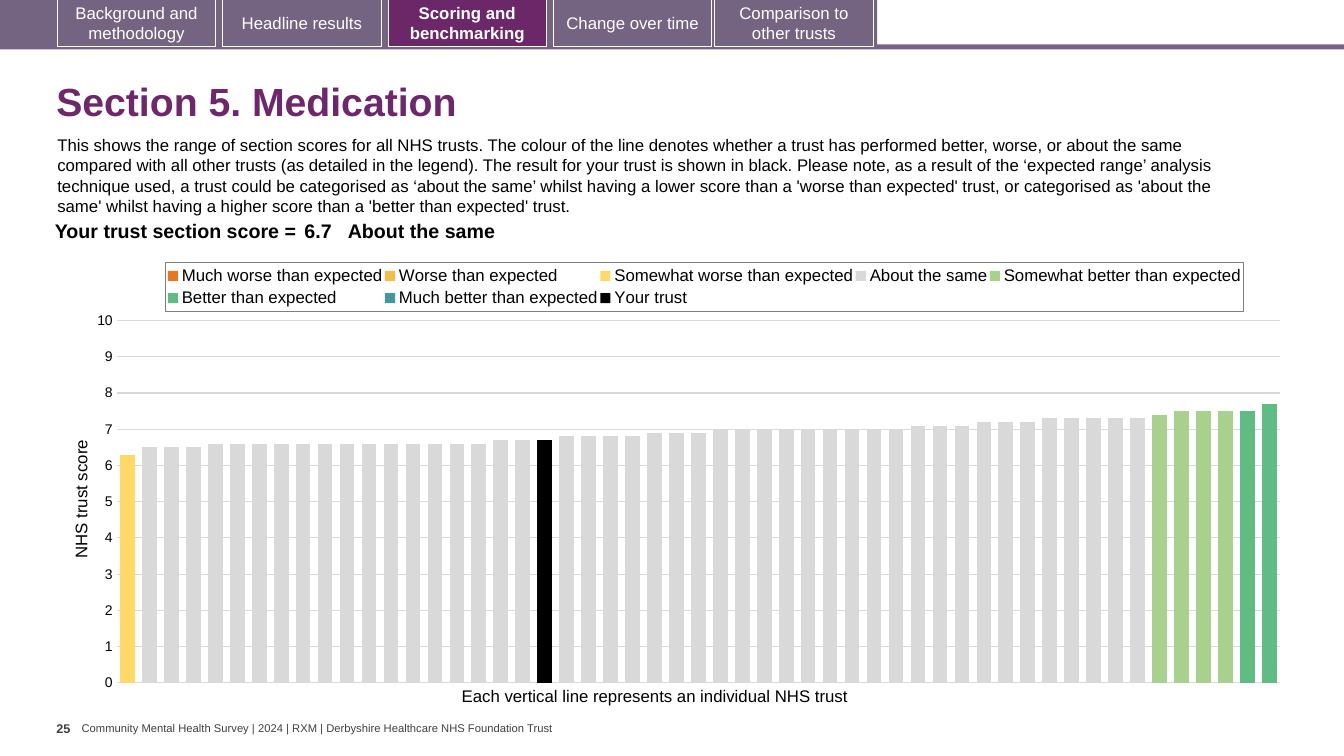
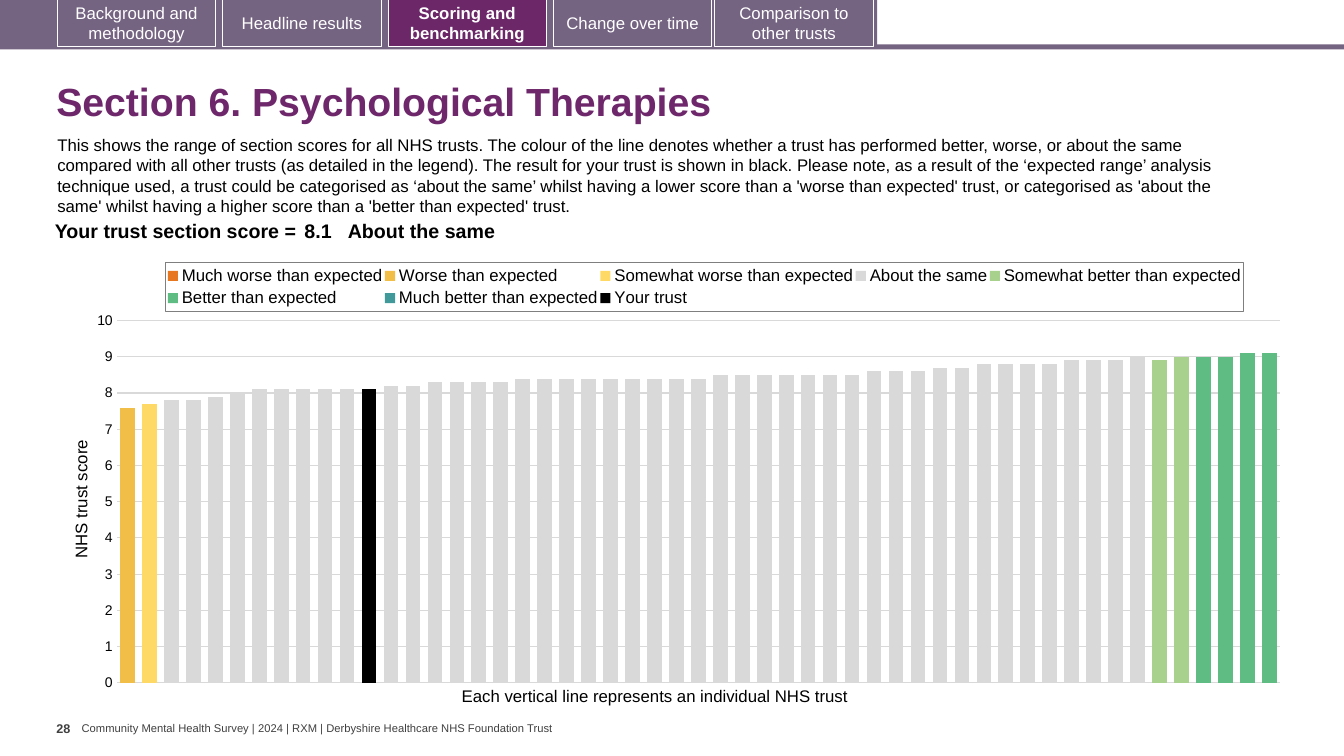
from copy import deepcopy

from pptx import Presentation
from pptx.chart.data import CategoryChartData
from pptx.dml.color import RGBColor
from pptx.enum.chart import XL_CHART_TYPE, XL_LEGEND_POSITION, XL_TICK_MARK
from pptx.enum.shapes import MSO_SHAPE
from pptx.enum.text import MSO_ANCHOR, PP_ALIGN
from pptx.oxml import parse_xml
from pptx.oxml.ns import nsdecls, qn
from pptx.util import Inches, Pt

COLUMNS = XL_CHART_TYPE.COLUMN_CLUSTERED
LEGEND_TOP = XL_LEGEND_POSITION.TOP
NO_TICK = XL_TICK_MARK.NONE
RECTANGLE = MSO_SHAPE.RECTANGLE
TOP, MIDDLE = MSO_ANCHOR.TOP, MSO_ANCHOR.MIDDLE
LEFT, CENTER, RIGHT = PP_ALIGN.LEFT, PP_ALIGN.CENTER, PP_ALIGN.RIGHT

SLIDE_WIDTH, SLIDE_HEIGHT = 13.33, 7.5
FONT, CHART_FONT = "Arial", "Calibri"
BLACK, WHITE, GREY = "000000", "FFFFFF", "404040"
BAND, ACTIVE_TAB, TITLE = "756382", "6B2768", "6D276A"
GRID, LEGEND_BORDER = "D9D9D9", "7F7F7F"

TABS = [
    (0.57, "Background and methodology"),
    (2.21, "Headline results"),
    (3.85, "Scoring and benchmarking"),
    (5.49, "Change over time"),
    (7.09, "Comparison to other trusts"),
]
CURRENT_TAB = "Scoring and benchmarking"
FOOTER = "Community Mental Health Survey | 2024 | RXM | Derbyshire Healthcare NHS Foundation Trust"
EXPLANATION = (
    "This shows the range of section scores for all NHS trusts. The colour of the line denotes "
    "whether a trust has performed better, worse, or about the same compared with all other trusts "
    "(as detailed in the legend). The result for your trust is shown in black. Please note, as a "
    "result of the ‘expected range’ analysis technique used, a trust could be categorised as "
    "‘about the same’ whilst having a lower score than a 'worse than expected' trust, or "
    "categorised as 'about the same' whilst having a higher score than a 'better than expected' trust."
)
SCORE_LABEL = "Your trust section score ="
SCORE_COLUMNS = [2.63, 0.47, 8.59]
AXIS_TITLE = "NHS trust score"
CATEGORY_NOTE = "Each vertical line represents an individual NHS trust"

YOUR_TRUST = "Your trust"
SERIES_COLORS = {
    "Much worse than expected": "E87722",
    "Worse than expected": "F1BE48",
    "Somewhat worse than expected": "FFD966",
    "About the same": "D9D9D9",
    "Somewhat better than expected": "A9D18E",
    "Better than expected": "5FBD83",
    "Much better than expected": "419999",
    YOUR_TRUST: BLACK,
}

# Scores run from left to right, band after band; rank is the place of your trust.
SECTIONS = [
    {
        "page": "25", "title": "Section 5. Medication",
        "score": 6.7, "rank": 20, "result": "About the same",
        "bands": {
            "Somewhat worse than expected": [6.3],
            "About the same": (
                [6.5] * 3 + [6.6] * 13 + [6.7] * 3 + [6.8] * 4 + [6.9] * 3
                + [7] * 9 + [7.1] * 3 + [7.2] * 3 + [7.3] * 5),
            "Somewhat better than expected": [7.4, 7.5, 7.5, 7.5],
            "Better than expected": [7.5, 7.7],
        },
    },
    {
        "page": "28", "title": "Section 6. Psychological Therapies",
        "score": 8.1, "rank": 12, "result": "About the same",
        "bands": {
            "Worse than expected": [7.6],
            "Somewhat worse than expected": [7.7],
            "About the same": (
                [7.8] * 2 + [7.9, 8] + [8.1] * 6 + [8.2] * 2 + [8.3] * 4
                + [8.4] * 9 + [8.5] * 7 + [8.6] * 3 + [8.7] * 2
                + [8.8] * 4 + [8.9] * 3 + [9]),
            "Somewhat better than expected": [8.9, 9],
            "Better than expected": [9, 9, 9.1, 9.1],
        },
    },
]


def rgb(color):
    return RGBColor.from_string(color)


def style_font(font, size, color=BLACK, bold=False, name=FONT):
    font.size, font.bold, font.name = Pt(size), bold, name
    font.color.rgb = rgb(color)


def write_text(frame, text, align=LEFT, line_spacing=None, **font_format):
    paragraph = frame.paragraphs[0]
    paragraph.alignment = align
    if line_spacing:
        paragraph.line_spacing = line_spacing
    run = paragraph.add_run()
    run.text = text
    style_font(run.font, **font_format)


def add_text_box(slide, box, text, anchor=TOP, margins=(0.1, 0.05), wrap=True, **text_format):
    frame = slide.shapes.add_textbox(*map(Inches, box)).text_frame
    frame.word_wrap, frame.vertical_anchor = wrap, anchor
    frame.margin_left = frame.margin_right = Inches(margins[0])
    frame.margin_top = frame.margin_bottom = Inches(margins[1])
    write_text(frame, text, **text_format)


def add_rectangle(slide, box, fill, line=None):
    shape = slide.shapes.add_shape(RECTANGLE, *map(Inches, box))
    shape.shadow.inherit = False
    shape.fill.solid()
    shape.fill.fore_color.rgb = rgb(fill)
    if line:
        shape.line.color.rgb = rgb(line)
        shape.line.width = Pt(0.75)
    else:
        shape.line.fill.background()
    return shape


def add_frame(slide, page):
    """Draw the footer and navigation tabs that every slide carries."""
    add_text_box(slide, (0.81, 7.16, 4.73, 0.13), FOOTER, anchor=MIDDLE, margins=(0, 0),
                 wrap=False, size=8, color=GREY)
    add_text_box(slide, (0.56, 7.1, 0.25, 0.4), page, margins=(0, 0.05), wrap=False,
                 size=9, color=GREY, bold=True)
    add_rectangle(slide, (0, 0.44, SLIDE_WIDTH, 0.05), BAND)
    add_rectangle(slide, (0, 0, 8.7, 0.47), BAND)
    for left, label in TABS:
        current = label == CURRENT_TAB
        tab = add_rectangle(slide, (left, -0.01, 1.57, 0.47),
                            ACTIVE_TAB if current else BAND, WHITE)
        tab.text_frame.word_wrap = True
        tab.text_frame.vertical_anchor = MIDDLE
        write_text(tab.text_frame, label, align=CENTER, size=12, color=WHITE, bold=current)


def set_layout(element, position, target=None, **shares):
    """Place a chart part by shares of the chart's size."""
    for layout in element.findall(qn("c:layout")):
        element.remove(layout)
    values = {"layoutTarget": target} if target else {}
    values |= {"xMode": "edge", "yMode": "edge"} | shares
    children = "".join(f'<c:{tag} val="{value}"/>' for tag, value in values.items())
    element.insert(position, parse_xml(
        f'<c:layout {nsdecls("c")}><c:manualLayout>{children}</c:manualLayout></c:layout>'))


def move_last_series_to_second_axis(chart):
    plot_area = chart.element.find(".//" + qn("c:plotArea"))
    first = plot_area.find(qn("c:barChart"))
    second = deepcopy(first)
    first.remove(first.findall(qn("c:ser"))[-1])
    for series in second.findall(qn("c:ser"))[:-1]:
        second.remove(series)
    first.addnext(second)

    category_axis = deepcopy(plot_area.find(qn("c:catAx")))
    value_axis = deepcopy(plot_area.find(qn("c:valAx")))
    for tag in ("c:majorGridlines", "c:title"):
        value_axis.remove(value_axis.find(qn(tag)))
    for tag, value in (("axPos", "r"), ("tickLblPos", "none"), ("crosses", "max")):
        value_axis.find(qn("c:" + tag)).set("val", value)
    plot_area.find(qn("c:valAx")).addnext(value_axis)
    value_axis.addnext(category_axis)

    category_id, value_id = "5001", "5002"
    for axis, own, other in ((category_axis, category_id, value_id),
                             (value_axis, value_id, category_id)):
        axis.find(qn("c:axId")).set("val", own)
        axis.find(qn("c:crossAx")).set("val", other)
    for reference, identifier in zip(second.findall(qn("c:axId")), (category_id, value_id)):
        reference.set("val", identifier)


def build_chart_data(section):
    """Give each band its stretch of the ranked trusts, empty elsewhere."""
    bands = section["bands"]
    count = sum(map(len, bands.values()))
    data = CategoryChartData()
    data.categories = [str(number) for number in range(1, count + 1)]
    start = 0
    for name in SERIES_COLORS:
        values = [None] * count
        if name == YOUR_TRUST:
            values[section["rank"] - 1] = section["score"]
        else:
            scores = bands.get(name, [])
            values[start:start + len(scores)] = scores
            start += len(scores)
        data.add_series(name, values)
    return data


def add_score_chart(slide, section):
    box = map(Inches, (0.67, 2.47, 12.15, 4.44))
    chart = slide.shapes.add_chart(COLUMNS, *box, build_chart_data(section)).chart
    style_font(chart.font, 10, name=CHART_FONT)
    chart.has_title = False
    plot = chart.plots[0]
    plot.vary_by_categories = False
    plot.gap_width, plot.overlap = 50, 100
    for series, color in zip(plot.series, SERIES_COLORS.values()):
        series.format.fill.solid()
        series.format.fill.fore_color.rgb = rgb(color)
        series.invert_if_negative = False

    chart.category_axis.visible = False
    axis = chart.value_axis
    axis.minimum_scale, axis.maximum_scale, axis.major_unit = 0, 10, 1
    axis.major_tick_mark = axis.minor_tick_mark = NO_TICK
    axis.format.line.fill.background()
    axis.major_gridlines.format.line.color.rgb = rgb(GRID)
    axis.major_gridlines.format.line.width = Pt(0.75)
    axis.tick_labels.number_format = "0"
    axis.tick_labels.number_format_is_linked = False
    style_font(axis.tick_labels.font, 10)
    write_text(axis.axis_title.text_frame, AXIS_TITLE, align=CENTER, size=12)

    chart.has_legend = True
    chart.legend.position = LEGEND_TOP
    chart.legend.include_in_layout = False
    style_font(chart.legend.font, 12)
    legend = chart.element.find(".//" + qn("c:legend"))
    legend.find(qn("c:overlay")).addnext(parse_xml(
        f'<c:spPr {nsdecls("c", "a")}><a:ln w="9525"><a:solidFill>'
        f'<a:srgbClr val="{LEGEND_BORDER}"/></a:solidFill></a:ln></c:spPr>'))
    set_layout(legend, 1, x=0.08, y=0.03, w=0.88, h=0.11)
    set_layout(chart.element.find(".//" + qn("c:valAx")).find(qn("c:title")), 1, x=0, y=0.42)
    set_layout(chart.element.find(".//" + qn("c:plotArea")), 0, target="inner",
               x=0.04, y=0.16, w=0.95, h=0.81)
    move_last_series_to_second_axis(chart)


def add_score_table(slide, section):
    box = map(Inches, (0.35, 2.15, sum(SCORE_COLUMNS), 0.31))
    table = slide.shapes.add_table(1, len(SCORE_COLUMNS), *box).table
    table.first_row = table.horz_banding = False
    texts = (SCORE_LABEL, str(section["score"]), section["result"])
    sides = (0.04, 0.04, 0)
    aligns = (RIGHT, LEFT, LEFT)
    for index, (width, text, side, align) in enumerate(zip(SCORE_COLUMNS, texts, sides, aligns)):
        table.columns[index].width = Inches(width)
        cell = table.cell(0, index)
        cell.fill.background()
        cell.margin_left = cell.margin_right = Inches(side)
        cell.margin_top = cell.margin_bottom = Inches(0.04)
        write_text(cell.text_frame, text, align=align, size=14, bold=True)


def main():
    presentation = Presentation()
    presentation.slide_width = Inches(SLIDE_WIDTH)
    presentation.slide_height = Inches(SLIDE_HEIGHT)
    blank_layout = presentation.slide_layouts[6]
    for section in SECTIONS:
        slide = presentation.slides.add_slide(blank_layout)
        add_frame(slide, section["page"])
        add_text_box(slide, (0.46, 0.67, 12.49, 0.72), section["title"], anchor=MIDDLE,
                     line_spacing=0.9, size=28, color=TITLE, bold=True)
        add_text_box(slide, (0.47, 1.29, 12.13, 0.91), EXPLANATION, size=12)
        add_text_box(slide, (4.48, 6.75, 4.11, 0.3), CATEGORY_NOTE, wrap=False, size=12)
        add_score_chart(slide, section)
        add_score_table(slide, section)
    presentation.save("out.pptx")


if __name__ == "__main__":
    main()
